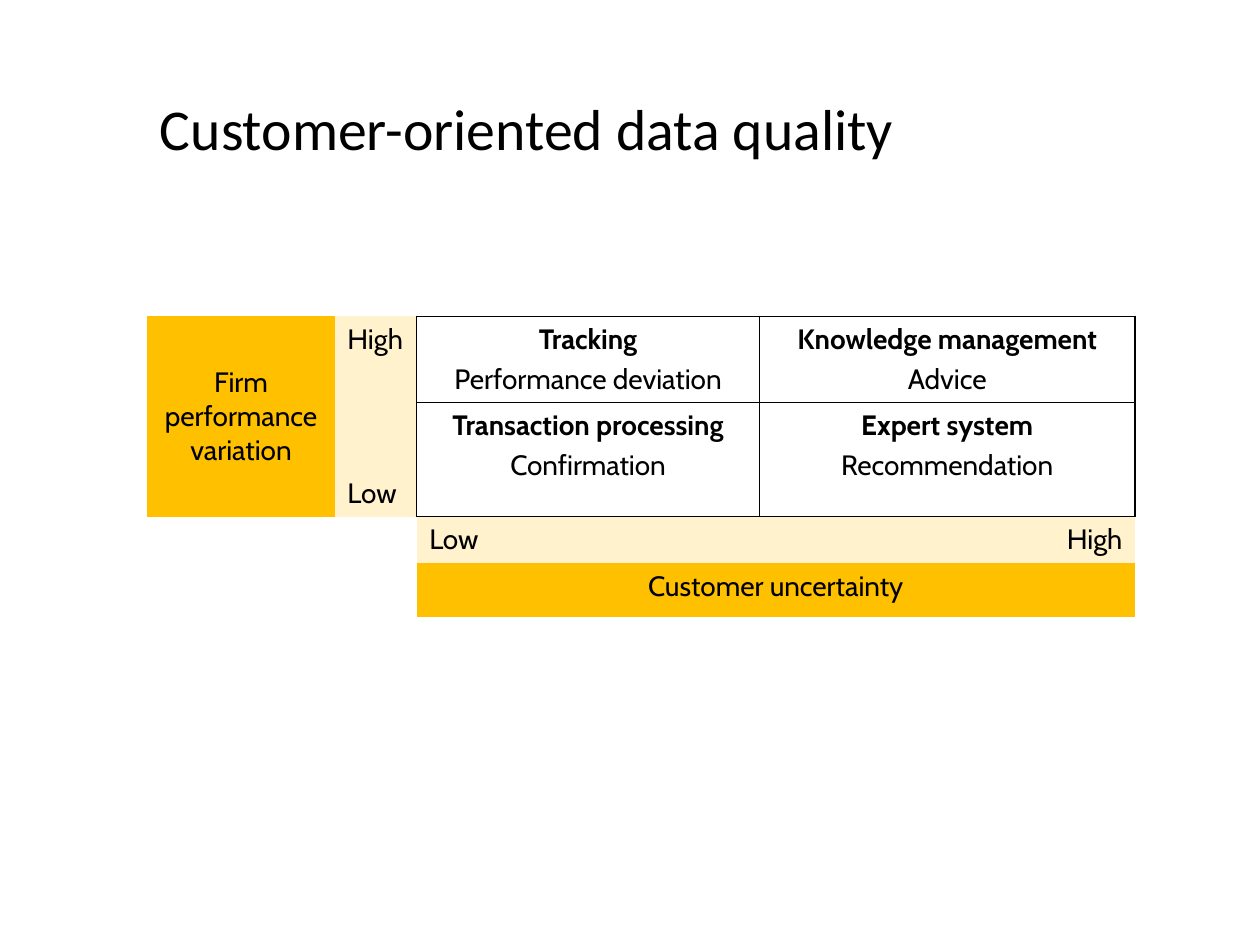
from lxml import etree
from pptx import Presentation
from pptx.dml.color import RGBColor
from pptx.enum.text import MSO_ANCHOR, MSO_AUTO_SIZE, PP_ALIGN
from pptx.oxml.ns import qn
from pptx.util import Cm, Pt

LEFT, CENTER, RIGHT = PP_ALIGN.LEFT, PP_ALIGN.CENTER, PP_ALIGN.RIGHT
TOP, MIDDLE, BOTTOM = MSO_ANCHOR.TOP, MSO_ANCHOR.MIDDLE, MSO_ANCHOR.BOTTOM
NO_AUTOFIT = MSO_AUTO_SIZE.NONE

BLACK = RGBColor(0x00, 0x00, 0x00)
WHITE = RGBColor(0xFF, 0xFF, 0xFF)
AMBER = RGBColor(0xFF, 0xC0, 0x00)
CREAM = RGBColor(0xFF, 0xF2, 0xCC)

TITLE_ONLY = 5
PLAIN_TABLE = "{2D5ABB26-0587-4C30-8999-92F81FD0307C}"
COLUMNS = (3.78, 1.65, 6.91, 7.57)
ROWS = (1.7, 1.35, 0.89, 1.09)

QUADRANTS = {
    (0, 2): ("Tracking", "Performance deviation"),
    (0, 3): ("Knowledge management", "Advice"),
    (1, 2): ("Transaction processing", "Confirmation"),
    (1, 3): ("Expert system", "Recommendation"),
}
AXIS_ENDS = {
    (0, 1): ("High", LEFT, TOP),
    (1, 1): ("Low", LEFT, BOTTOM),
    (2, 2): ("Low", LEFT, TOP),
    (2, 3): ("High", RIGHT, TOP),
}
AXIS_NAMES = {
    (0, 0): ("Firm performance variation", MIDDLE, (1, 0)),
    (3, 2): ("Customer uncertainty", TOP, (3, 3)),
}


def write(para, text, font, size, bold=False):
    """Add one formatted run to a paragraph."""
    span = para.add_run()
    span.text = text
    span.font.name = font
    span.font.size = Pt(size)
    span.font.bold = bold
    span.font.color.rgb = BLACK


def outline(cell):
    """Draw a thin black border on all sides of a cell."""
    properties = cell._tc.get_or_add_tcPr()
    for side in ("L", "R", "T", "B"):
        line = etree.SubElement(properties, qn(f"a:ln{side}"), w=str(Pt(1)))
        paint = etree.SubElement(line, qn("a:solidFill"))
        etree.SubElement(paint, qn("a:srgbClr"), val=str(BLACK))


def fill_cell(cell, lines, color, align=CENTER, anchor=TOP, bold_first=False):
    """Colour a cell and write its lines, one paragraph each."""
    cell.fill.solid()
    cell.fill.fore_color.rgb = color
    cell.vertical_anchor = anchor
    frame = cell.text_frame
    for index, text in enumerate(lines):
        para = frame.add_paragraph() if index else frame.paragraphs[0]
        para.alignment = align
        para.space_before = Pt(3.2)
        write(para, text, "Cabin", 16, bold_first and index == 0)


def place_title(page, left, top, width, height):
    """Move and format the title placeholder."""
    box = page.shapes.title
    box.left, box.top, box.width, box.height = left, top, width, height
    frame = box.text_frame
    frame.auto_size = NO_AUTOFIT
    frame.vertical_anchor = MIDDLE
    para = frame.paragraphs[0]
    para.alignment = LEFT
    para.line_spacing = 0.9
    write(para, "Customer-oriented data quality", "Calibri", 33)


def place_matrix(page, left, top, width, height):
    """Build the two-by-two matrix with its axes as one table."""
    box = page.shapes.add_table(len(ROWS), len(COLUMNS), left, top, width, height)
    table = box.table
    table.first_row = table.horz_banding = False
    table._tbl.tblPr.find(qn("a:tableStyleId")).text = PLAIN_TABLE
    for column, size in zip(table.columns, COLUMNS):
        column.width = Cm(size)
    for row, size in zip(table.rows, ROWS):
        row.height = Cm(size)
    box.height = height

    for spot, lines in QUADRANTS.items():
        outline(table.cell(*spot))
        fill_cell(table.cell(*spot), lines, WHITE, bold_first=True)
    for spot, (text, align, anchor) in AXIS_ENDS.items():
        fill_cell(table.cell(*spot), [text], CREAM, align, anchor)
    for spot, (text, anchor, end) in AXIS_NAMES.items():
        table.cell(*spot).merge(table.cell(*end))
        fill_cell(table.cell(*spot), [text], AMBER, anchor=anchor)
    for cell in table.iter_cells():
        if not cell.text:
            para = cell.text_frame.paragraphs[0]
            etree.SubElement(para._p, qn("a:endParaRPr"), sz="1200")


def main():
    """Create the deck and save it."""
    deck = Presentation()
    deck.slide_width, deck.slide_height = Cm(25.4), Cm(19.05)
    page = deck.slides.add_slide(deck.slide_layouts[TITLE_ONLY])
    place_title(page, Cm(2.97), Cm(1.07), Cm(21.59), Cm(3.18))
    place_matrix(page, Cm(2.97), Cm(6.38), Cm(19.91), Cm(5.51))
    deck.save("out.pptx")


if __name__ == "__main__":
    main()
